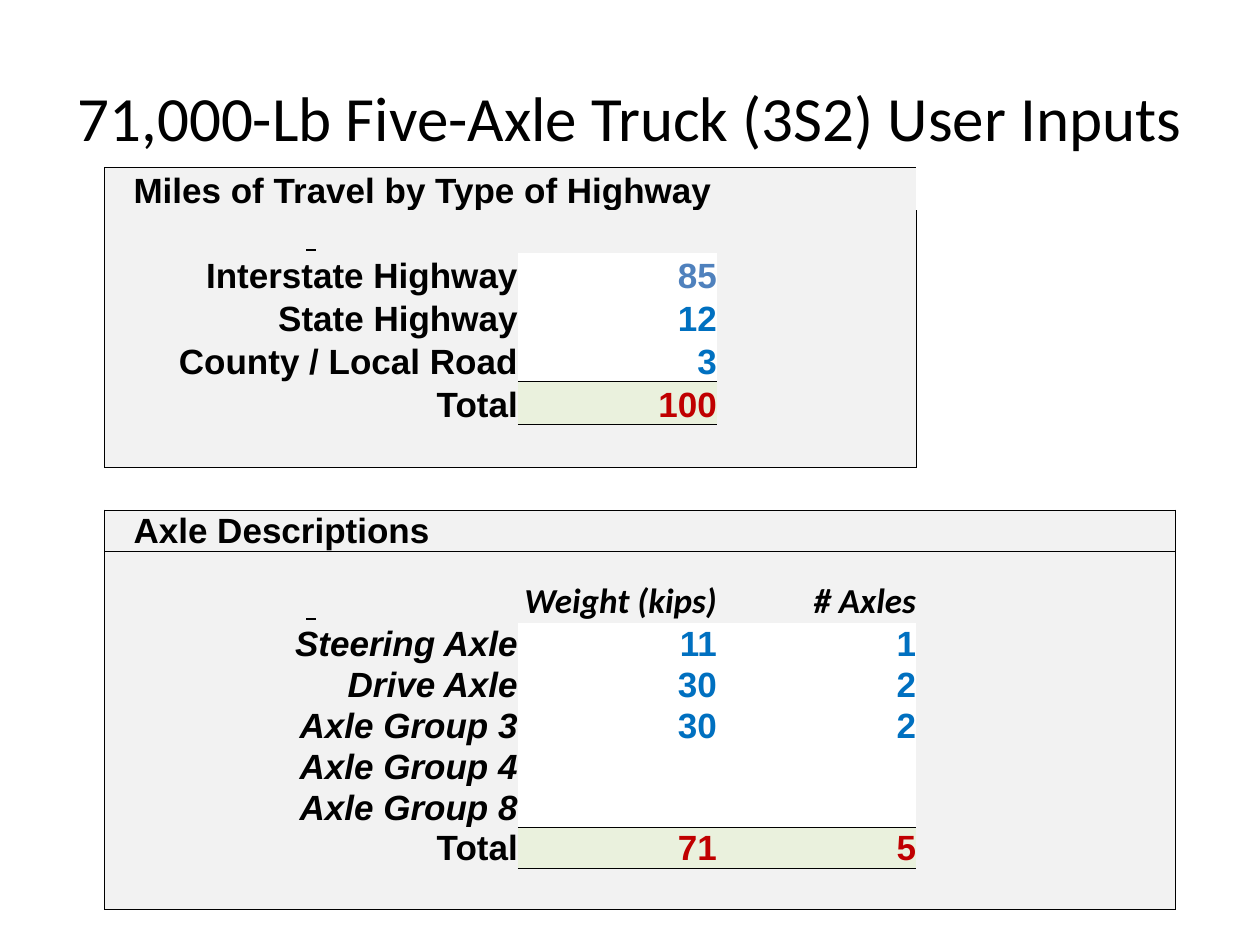
import pptx
import pptx.dml.color
import pptx.enum.text
import pptx.oxml
import pptx.oxml.ns
import pptx.util
from dataclasses import dataclass

Inches = pptx.util.Inches
Align = pptx.enum.text.PP_ALIGN
Anchor = pptx.enum.text.MSO_ANCHOR


@dataclass
class Theme:
    """Colours, fonts and type sizes of the slide."""
    ink: str = "000000"
    panel: str = "F2F2F2"
    total_fill: str = "EAF1DD"
    entry: str = "0070C0"
    first_entry: str = "4F81BD"
    total: str = "C00000"
    heading_font: str = "Calibri"
    body_font: str = "Arial"
    title_size: int = 36
    body_size: int = 20
    line_width: float = 0.5


NO_STYLE = "{2D5ABB26-0587-4C30-8999-92F81FD0307C}"
COLUMNS = [3.28, 1.58, 1.58, 2.06]
ROWS = [0.34] * 8 + [0.325] + [0.57] + [0.325] * 7
MILES = [("Interstate Highway", "85"), ("State Highway", "12"),
         ("County / Local Road", "3"), ("Total", "100")]
AXLES = [("Steering Axle", "11", "1"), ("Drive Axle", "30", "2"),
         ("Axle Group 3", "30", "2"), ("Axle Group 4", "", ""),
         ("Axle Group 8", "", ""), ("Total", "71", "5")]


def write(frame, text, *, font, size, color, align=Align.LEFT, bold=False,
          italic=False, underline=False):
    """Put one formatted line of text in a text frame."""
    para = frame.paragraphs[0]
    para.alignment = align
    span = para.add_run()
    span.text = text
    span.font.name = font
    span.font.size = pptx.util.Pt(size)
    span.font.bold = bold
    span.font.italic = italic
    span.font.underline = underline
    span.font.color.rgb = pptx.dml.color.RGBColor.from_string(color)


class Page:
    """Holds the theme and the current slide and adds elements to it."""

    def __init__(self, deck, theme):
        """Add a title-only slide to the deck."""
        self.theme = theme
        self.slide = deck.slides.add_slide(deck.slide_layouts[5])

    def title(self, text, left, top, width, height):
        """Place and fill the title placeholder."""
        box = self.slide.shapes.title
        box.left, box.top = Inches(left), Inches(top)
        box.width, box.height = Inches(width), Inches(height)
        frame = box.text_frame
        frame.auto_size = pptx.enum.text.MSO_AUTO_SIZE.NONE
        frame.vertical_anchor = Anchor.MIDDLE
        write(frame, text, font=self.theme.heading_font,
              size=self.theme.title_size, color=self.theme.ink, align=Align.CENTER)

    def table(self, left, top, columns, rows):
        """Add a plain table with the given column widths and row heights."""
        table = self.slide.shapes.add_table(
            len(rows), len(columns), Inches(left), Inches(top),
            Inches(sum(columns)), Inches(sum(rows))).table
        table.first_row = table.horz_banding = False
        table._tbl.tblPr.find(pptx.oxml.ns.qn("a:tableStyleId")).text = NO_STYLE
        for column, width in zip(table.columns, columns):
            column.width = Inches(width)
        for row, height in zip(table.rows, rows):
            row.height = Inches(height)
        for cell in table.iter_cells():
            cell.margin_left = cell.margin_right = 0
            cell.margin_top = cell.margin_bottom = 0
            cell.vertical_anchor = Anchor.BOTTOM
            cell.fill.background()
        return table

    def fill(self, cell, color):
        """Fill a cell with one colour."""
        cell.fill.solid()
        cell.fill.fore_color.rgb = pptx.dml.color.RGBColor.from_string(color)

    def border(self, cell, sides):
        """Draw lines on the named sides, given in the order L, R, T, B."""
        properties = cell._tc.get_or_add_tcPr()
        width = pptx.util.Pt(self.theme.line_width)
        for index, side in enumerate(sides):
            properties.insert(index, pptx.oxml.parse_xml(
                f'<a:ln{side} {pptx.oxml.ns.nsdecls("a")} w="{width}"><a:solidFill>'
                f'<a:srgbClr val="{self.theme.ink}"/></a:solidFill></a:ln{side}>'))

    def text(self, cell, text, **style):
        """Write bold table text, aligned right unless told otherwise."""
        base = dict(font=self.theme.body_font, size=self.theme.body_size,
                    color=self.theme.ink, align=Align.RIGHT, bold=True)
        write(cell.text_frame, text, **{**base, **style})

    def panel(self, table, first, last, width, heading, entries, italic=False):
        """Fill a framed block of rows with a heading, entries and a total."""
        total_row = last - 1
        for row in range(first, last + 1):
            for column in range(width):
                cell = table.cell(row, column)
                edges = {"L": column == 0, "R": column == width - 1,
                         "T": row == first, "B": row == last}
                is_value = (first + 2 <= row <= total_row
                            and 0 < column < len(entries[0]))
                if is_value and row == total_row:
                    edges["T"] = True
                    self.fill(cell, self.theme.total_fill)
                elif not is_value:
                    self.fill(cell, self.theme.panel)
                self.border(cell, [side for side, drawn in edges.items() if drawn])
        heading_cell = table.cell(first, 0)
        heading_cell.margin_left = Inches(0.23)
        self.text(heading_cell, heading, align=Align.LEFT)
        self.text(table.cell(first + 1, 0), " ", align=Align.CENTER, underline=True)
        for row, (label, *values) in enumerate(entries, first + 2):
            is_total = row == total_row
            self.text(table.cell(row, 0), label, italic=italic and not is_total)
            color = self.theme.total if is_total else self.theme.entry
            if label == "Interstate Highway":
                color = self.theme.first_entry
            for column, value in enumerate(values, 1):
                if value:
                    self.text(table.cell(row, column), value, color=color)


def main():
    """Build the slide and save it."""
    deck = pptx.Presentation()
    deck.slide_width, deck.slide_height = Inches(10), Inches(7.5)
    theme = Theme()
    page = Page(deck, theme)
    page.title("71,000-Lb Five-Axle Truck (3S2) User Inputs", 0.5, 0.3, 9, 1.25)
    table = page.table(0.83, 1.33, COLUMNS, ROWS)
    page.panel(table, 0, 6, 3, "Miles of Travel by Type of Highway", MILES)
    table.cell(0, 0).merge(table.cell(0, 2))
    page.panel(table, 8, 16, 4, "Axle Descriptions", AXLES, italic=True)
    for column, label in enumerate(["Weight (kips)", "# Axles"], 1):
        page.text(table.cell(9, column), label, font=theme.heading_font, italic=True)
    deck.save("out.pptx")


if __name__ == "__main__":
    main()
